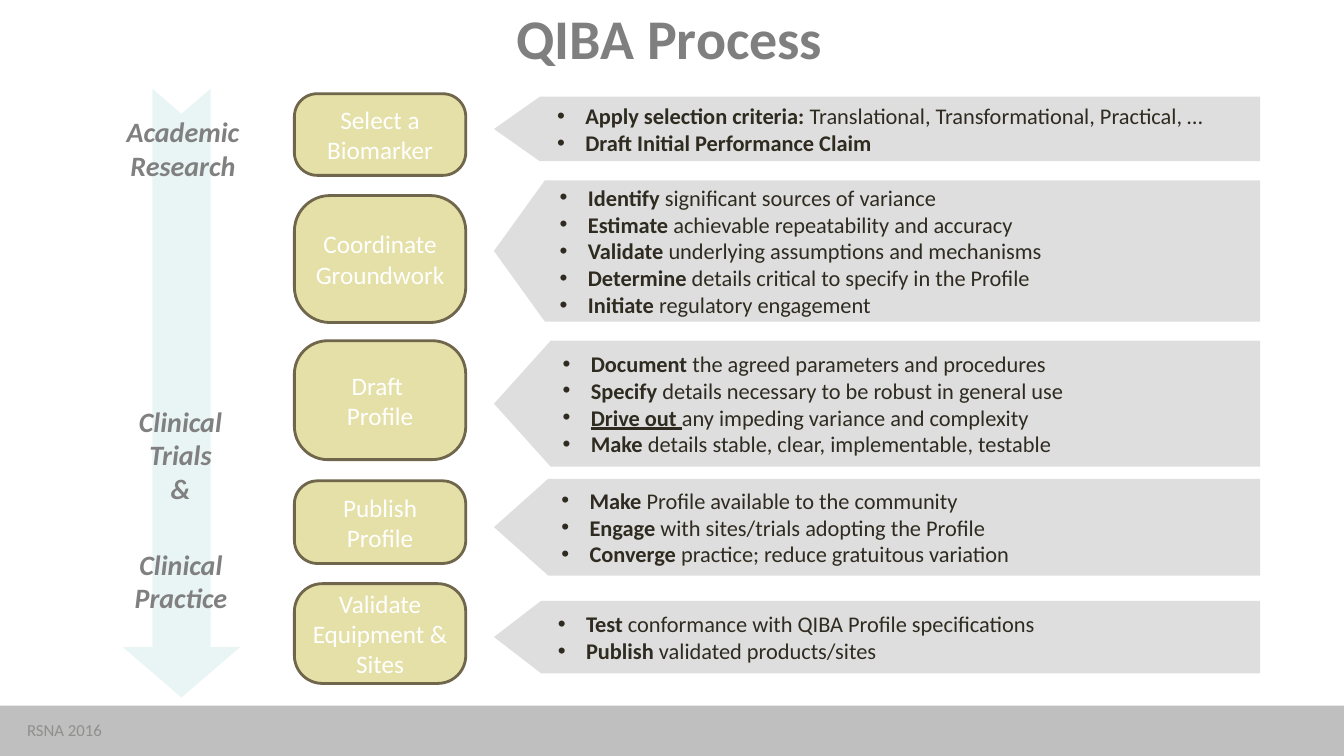
"""Build the QIBA Process slide: five steps with their activities, from research to practice."""
import pptx
import pptx.dml.color
import pptx.enum.shapes
import pptx.enum.text
import pptx.oxml
import pptx.oxml.ns
import pptx.util
from pptx.util import Inches

COLORS = {
    "bar": "BFBFBF", "title": "7F7F7F", "footer": "8F8F8D", "timeline": "D4EDEC",
    "step": "E4E0A7", "step_line": "6F664C", "step_text": "FFFFFF",
    "stage": "808080", "activity": "D9D9D9", "activity_text": "2F2B20",
}
SHAPE = pptx.enum.shapes.MSO_SHAPE
CENTER = pptx.enum.text.PP_ALIGN.CENTER
MIDDLE = pptx.enum.text.MSO_ANCHOR.MIDDLE


def add_filled(kind, left, top, width, height, color, opacity=100):
    shape = slide.shapes.add_shape(kind, Inches(left), Inches(top), Inches(width), Inches(height))
    shape.shadow.inherit = False
    shape.fill.solid()
    shape.fill.fore_color.rgb = pptx.dml.color.RGBColor.from_string(COLORS[color])
    shape.line.fill.background()
    if opacity < 100:
        tint = shape.fill._xPr.find(".//" + pptx.oxml.ns.qn("a:srgbClr"))
        tint.append(pptx.oxml.parse_xml(
            f'<a:alpha {pptx.oxml.ns.nsdecls("a")} val="{opacity * 1000}"/>'))
    return shape


def add_run(paragraph, text, size, color, bold=False, italic=False, underline=False):
    run = paragraph.add_run()
    run.text = text
    run.font.name = "Calibri"
    run.font.size = pptx.util.Pt(size)
    run.font.bold = bold
    run.font.italic = italic
    run.font.underline = underline
    run.font.color.rgb = pptx.dml.color.RGBColor.from_string(COLORS[color])


deck = pptx.Presentation()
deck.slide_width, deck.slide_height = Inches(13.33), Inches(7.5)
slide = deck.slides.add_slide(deck.slide_layouts[5])

add_filled(SHAPE.RECTANGLE, 0, 7, 13.33, 0.5, "bar")

title = slide.shapes.title
title.left, title.top, title.width, title.height = (
    Inches(0.42), Inches(-0.01), Inches(12.44), Inches(0.87))
title.text_frame.vertical_anchor = MIDDLE
heading = title.text_frame.paragraphs[0]
heading.alignment = CENTER
heading.line_spacing = 0.8
add_run(heading, "QIBA Process", 40, "title", bold=True)

footer = slide.shapes.add_textbox(Inches(0.17), Inches(7.04), Inches(7.67), Inches(0.4)).text_frame
footer.word_wrap = True
footer.vertical_anchor = MIDDLE
add_run(footer.paragraphs[0], "RSNA 2016", 12, "footer")

timeline = add_filled(SHAPE.NOTCHED_RIGHT_ARROW, -1.22, 3.32, 6.04, 1.16, "timeline", 51)
timeline.rotation = 90
timeline.adjustments[0], timeline.adjustments[1] = 0.5, 0.43

stages = [
    (1.08, 1.09, 1.47, 0.92, [["Academic", "Research"]]),
    (1.24, 3.96, 1.1, 1.31, [["Clinical", "Trials"], ["&"]]),
    (1.19, 5.38, 1.21, 0.91, [["Clinical", "Practice"]]),
]
for left, top, width, height, paragraphs in stages:
    stage = slide.shapes.add_textbox(
        Inches(left), Inches(top), Inches(width), Inches(height)).text_frame
    stage.word_wrap = False
    for number, lines in enumerate(paragraphs):
        paragraph = stage.add_paragraph() if number else stage.paragraphs[0]
        paragraph.alignment = CENTER
        for position, line in enumerate(lines):
            if position:
                paragraph.add_line_break()
            add_run(paragraph, line, 20, "stage", bold=True, italic=True)

steps = [
    (0.93, 0.81, 0.1, ["Select a Biomarker"]),
    (1.94, 1.26, 0, ["Coordinate Groundwork"]),
    (3.38, 1.18, 0, ["Draft ", "Profile"]),
    (4.77, 0.82, 0.1, ["Publish Profile"]),
    (5.79, 0.99, 0.1, ["Validate", "Equipment & Sites"]),
]
for top, height, side_inset, lines in steps:
    step = add_filled(SHAPE.ROUNDED_RECTANGLE, 2.92, top, 1.7, height, "step")
    step.adjustments[0] = 0.28
    step.line.color.rgb = pptx.dml.color.RGBColor.from_string(COLORS["step_line"])
    step.line.width = pptx.util.Pt(2)
    frame = step.text_frame
    frame.word_wrap = True
    frame.vertical_anchor = MIDDLE
    frame.margin_left = frame.margin_right = Inches(side_inset)
    paragraph = frame.paragraphs[0]
    paragraph.alignment = CENTER
    for position, line in enumerate(lines):
        if position:
            paragraph.add_line_break()
        add_run(paragraph, line, 18, "step_text")

activities = [
    (0.96, 0.64, 0.71, [
        ("Apply selection criteria: ", "Translational, Transformational, Practical, …"),
        ("Draft Initial Performance Claim", ""),
    ]),
    (1.79, 1.4, 0.36, [
        ("Identify ", "significant sources of variance"),
        ("Estimate", " achievable repeatability and accuracy"),
        ("Validate", " underlying assumptions and mechanisms"),
        ("Determine", " details critical to specify in the Profile"),
        ("Initiate", " regulatory engagement"),
    ]),
    (3.38, 1.25, 0.45, [
        ("Document", " the agreed parameters and procedures"),
        ("Specify ", "details necessary to be robust in general use"),
        ("Drive out ", "any impeding variance and complexity"),
        ("Make ", "details stable, clear, implementable, testable"),
    ]),
    (4.75, 0.96, 0.56, [
        ("Make ", "Profile available to the community"),
        ("Engage ", "with sites/trials adopting the Profile"),
        ("Converge", " practice; reduce gratuitous variation"),
    ]),
    (5.96, 0.72, 0.65, [
        ("Test", " conformance with QIBA Profile specifications"),
        ("Publish ", "validated products/sites"),
    ]),
]
for top, height, point, items in activities:
    activity = add_filled(SHAPE.PENTAGON, 4.9, top, 7.6, height, "activity", 85)
    activity.adjustments[0] = point
    activity._element.spPr.find(pptx.oxml.ns.qn("a:xfrm")).set("flipH", "1")
    frame = activity.text_frame
    frame.word_wrap = True
    frame.vertical_anchor = MIDDLE
    frame.margin_left = Inches(0.4)
    frame.margin_top = frame.margin_right = frame.margin_bottom = 0
    for number, (action, detail) in enumerate(items):
        paragraph = frame.add_paragraph() if number else frame.paragraphs[0]
        paragraph.alignment = pptx.enum.text.PP_ALIGN.LEFT
        properties = paragraph._p.get_or_add_pPr()
        properties.set("marL", str(Inches(0.28)))
        properties.set("indent", str(-Inches(0.28)))
        for bullet in ('buFont {} typeface="Arial"', 'buChar {} char="•"'):
            properties.append(pptx.oxml.parse_xml(
                f'<a:{bullet.format(pptx.oxml.ns.nsdecls("a"))}/>'))
        add_run(paragraph, action, 16, "activity_text", bold=True,
                underline=action == "Drive out ")
        if detail:
            add_run(paragraph, detail, 16, "activity_text")

deck.save("out.pptx")
